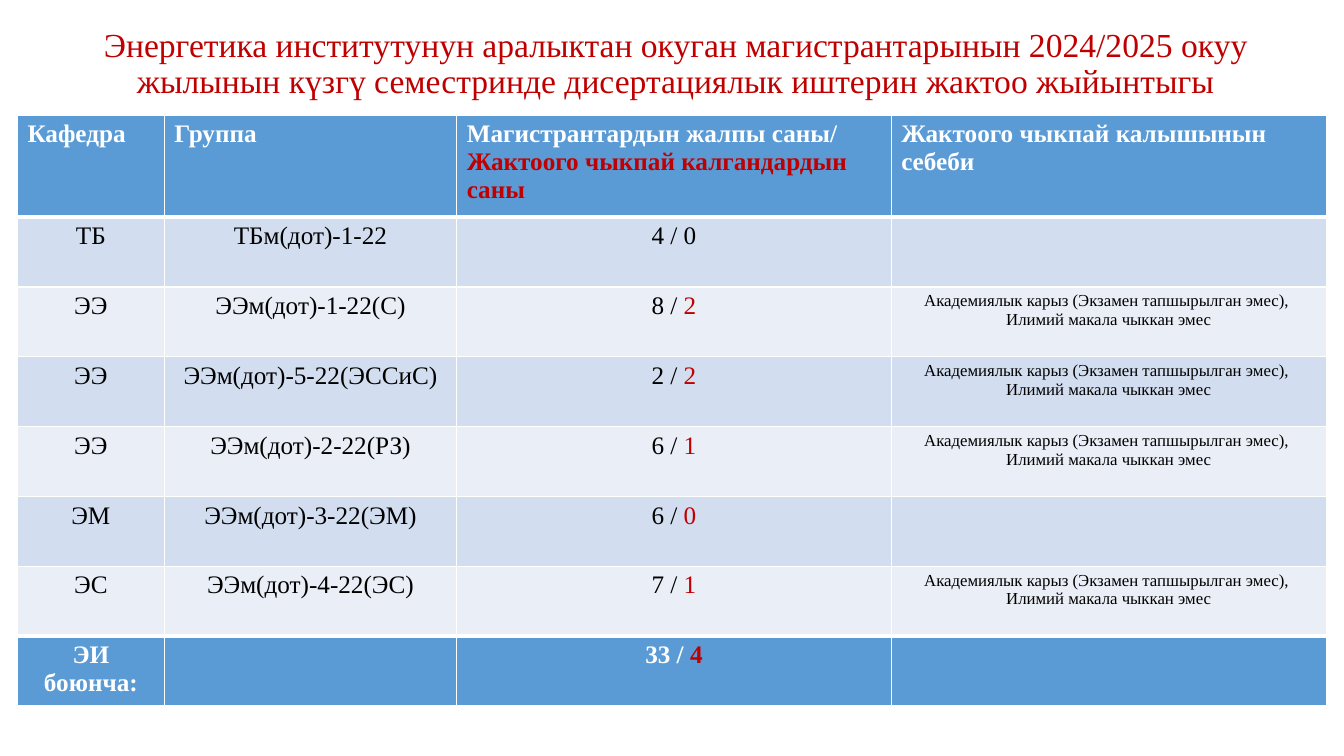
from dataclasses import dataclass

from lxml.etree import SubElement
from pptx import Presentation
from pptx.dml.color import RGBColor as Rgb
from pptx.enum.text import MSO_ANCHOR as Anchor, PP_ALIGN as Align
from pptx.oxml.ns import qn
from pptx.util import Cm, Pt


@dataclass(frozen=True)
class Theme:
    font: str = "Times New Roman"
    title_size: int = 24
    body_size: int = 18
    reason_size: int = 12
    accent: str = "C00000"
    dark: str = "000000"
    light: str = "FFFFFF"
    band: str = "5B9BD5"
    stripes: tuple = ("D2DEEF", "EAEFF7")
    thin: int = 1
    thick: int = 3


THEME = Theme()

TITLE = ("Энергетика институтунун аралыктан окуган магистрантарынын 2024/2025 окуу "
         "жылынын күзгү семестринде дисертациялык иштерин жактоо жыйынтыгы")
REASON = "Академиялык карыз (Экзамен тапшырылган эмес), \nИлимий макала чыккан эмес"

# A cell is a string, or a (plain, accented) pair
ROWS = [
    ["Кафедра", "Группа",
     ("Магистрантардын жалпы саны/ ", "Жактоого чыкпай калгандардын саны"),
     "Жактоого чыкпай калышынын себеби"],
    ["ТБ", "ТБм(дот)-1-22", "4 / 0", ""],
    ["ЭЭ", "ЭЭм(дот)-1-22(С)", ("8 / ", "2"), REASON],
    ["ЭЭ", "ЭЭм(дот)-5-22(ЭССиС)", ("2 / ", "2"), REASON],
    ["ЭЭ", "ЭЭм(дот)-2-22(РЗ)", ("6 / ", "1"), REASON],
    ["ЭМ", "ЭЭм(дот)-3-22(ЭМ)", ("6 / ", "0"), ""],
    ["ЭС", "ЭЭм(дот)-4-22(ЭС)", ("7 / ", "1"), REASON],
    ["ЭИ боюнча:", "", ("33 / ", "4"), ""],
]
COLUMN_WIDTHS = [3.7, 7.37, 10.95, 10.97]
HEADER_HEIGHT, ROW_HEIGHT = 2.57, 1.76


def format_span(span, size, color, bold=False):
    span.font.name = THEME.font
    span.font.size = Pt(size)
    span.font.bold = bold
    span.font.color.rgb = Rgb.from_string(color)


def add_title(page):
    box = page.shapes.title
    box.left, box.top, box.width, box.height = Cm(1.09), Cm(0.58), Cm(31.88), Cm(2.46)
    frame = box.text_frame
    frame.text = TITLE
    frame.word_wrap = True
    frame.vertical_anchor = Anchor.TOP
    para = frame.paragraphs[0]
    para.alignment = Align.CENTER
    para.line_spacing = 0.9
    para.space_before = Pt(10)
    format_span(para.runs[0], THEME.title_size, THEME.accent)


def set_borders(cell, top, bottom):
    """Draw white cell borders; they must stand before the fill in the XML."""
    properties = cell._tc.get_or_add_tcPr()
    widths = {"L": THEME.thin, "R": THEME.thin, "T": top, "B": bottom}
    for side, width in widths.items():
        line = SubElement(properties, qn(f"a:ln{side}"), w=str(Pt(width)))
        fill = SubElement(line, qn("a:solidFill"))
        SubElement(fill, qn("a:srgbClr"), val=THEME.light)


def fill_cell(cell, content, size, color, bold, align):
    plain, accented = content if isinstance(content, tuple) else (content, "")
    cell.text_frame.text = plain
    for para in cell.text_frame.paragraphs:
        para.alignment = align
        para.font.size = Pt(size)
        for span in para.runs:
            format_span(span, size, color, bold)
    if accented:
        span = cell.text_frame.paragraphs[0].add_run()
        span.text = accented
        format_span(span, size, THEME.accent, bold)


def add_results_table(page):
    last = len(ROWS) - 1
    table = page.shapes.add_table(
        len(ROWS), len(COLUMN_WIDTHS), Cm(0.44), Cm(2.9),
        Cm(sum(COLUMN_WIDTHS)), Cm(HEADER_HEIGHT + last * ROW_HEIGHT)).table
    for column, width in zip(table.columns, COLUMN_WIDTHS):
        column.width = Cm(width)

    for r, contents in enumerate(ROWS):
        table.rows[r].height = Cm(ROW_HEIGHT if r else HEADER_HEIGHT)
        is_band = r in (0, last)
        background = THEME.band if is_band else THEME.stripes[(r - 1) % 2]
        color = THEME.light if is_band else THEME.dark
        align = Align.CENTER if r else Align.LEFT
        # Thick rules part the header and the total from the body
        top = THEME.thick if r in (1, last) else THEME.thin
        bottom = THEME.thick if r in (0, last - 1) else THEME.thin
        for c, content in enumerate(contents):
            cell = table.cell(r, c)
            size = THEME.reason_size if content == REASON else THEME.body_size
            fill_cell(cell, content, size, color, is_band, align)
            set_borders(cell, top, bottom)
            cell.fill.solid()
            cell.fill.fore_color.rgb = Rgb.from_string(background)


def main():
    deck = Presentation()
    deck.slide_width, deck.slide_height = Cm(33.87), Cm(19.05)
    page = deck.slides.add_slide(deck.slide_layouts[5])  # title only
    add_title(page)
    add_results_table(page)
    deck.save("out.pptx")


if __name__ == "__main__":
    main()
